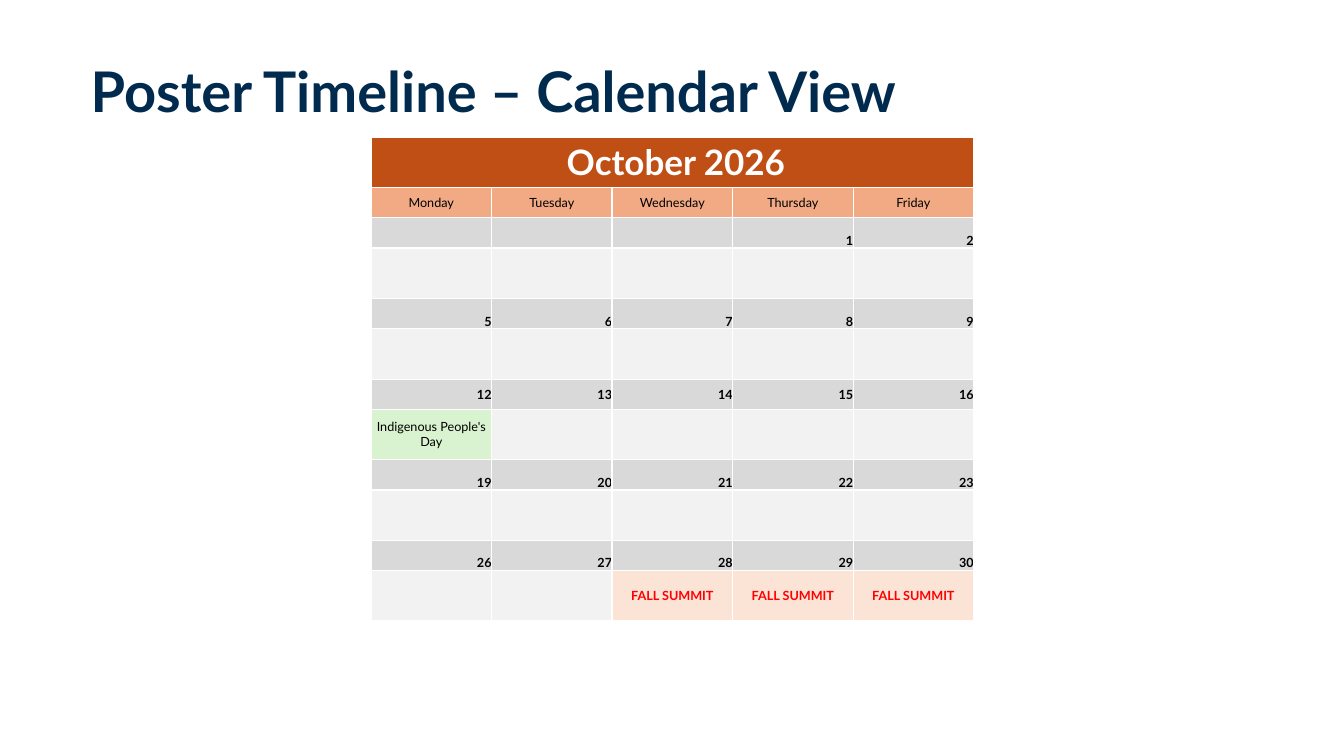
from lxml import etree
from pptx import Presentation
from pptx.dml.color import RGBColor
from pptx.enum.text import MSO_ANCHOR, MSO_AUTO_SIZE, PP_ALIGN
from pptx.oxml.ns import qn
from pptx.util import Pt

TOP, MIDDLE, BOTTOM = MSO_ANCHOR.TOP, MSO_ANCHOR.MIDDLE, MSO_ANCHOR.BOTTOM
LEFT, CENTER, RIGHT = PP_ALIGN.LEFT, PP_ALIGN.CENTER, PP_ALIGN.RIGHT
NO_AUTOFIT = MSO_AUTO_SIZE.NONE

NAVY = RGBColor(0x00, 0x2B, 0x4E)
WHITE = RGBColor(0xFF, 0xFF, 0xFF)
BLACK = RGBColor(0x00, 0x00, 0x00)
RED = RGBColor(0xFF, 0x00, 0x00)
RUST = RGBColor(0xC0, 0x4F, 0x15)
SALMON = RGBColor(0xF2, 0xAA, 0x84)
PEACH = RGBColor(0xFB, 0xE3, 0xD6)
GREEN = RGBColor(0xD9, 0xF2, 0xD0)
DATE_GRAY = RGBColor(0xD9, 0xD9, 0xD9)
DAY_GRAY = RGBColor(0xF2, 0xF2, 0xF2)

FONT = "Lato"
WEEKDAYS = ["Monday", "Tuesday", "Wednesday", "Thursday", "Friday"]
WEEKS = 5
FIRST_MONDAY = -2  # counted back from October 1, a Thursday
TALL, SHORT = 36, 21.6
COLUMN_WIDTH = 86.1

# Day of the month: text, fill, text colour, bold
EVENTS = {12: ("Indigenous People's Day", GREEN, BLACK, False)}
EVENTS.update({day: ("FALL SUMMIT", PEACH, RED, True) for day in (28, 29, 30)})


def add_run(paragraph, text, size, color, bold):
    run = paragraph.add_run()
    run.text = text
    run.font.name = FONT
    run.font.size = Pt(size)
    run.font.color.rgb = color
    run.font.bold = bold


def add_title(slide, text):
    title = slide.shapes.title
    title.left, title.top, title.width, title.height = Pt(57.6), Pt(42.5), Pt(844.6), Pt(54.7)
    frame = title.text_frame
    frame.auto_size = NO_AUTOFIT
    frame.vertical_anchor = TOP
    paragraph = frame.paragraphs[0]
    paragraph.alignment = LEFT
    paragraph.line_spacing = 0.9
    add_run(paragraph, text, 40, NAVY, True)


def add_borders(cell):
    properties = cell._tc.get_or_add_tcPr()
    for side in ("a:lnL", "a:lnR", "a:lnT", "a:lnB"):
        line = etree.SubElement(properties, qn(side), w=str(Pt(1)))
        fill = etree.SubElement(line, qn("a:solidFill"))
        etree.SubElement(fill, qn("a:srgbClr"), val=str(WHITE))


def fill_cell(cell, text, fill, size=9, color=BLACK, bold=False, align=CENTER, anchor=MIDDLE):
    add_borders(cell)
    cell.fill.solid()
    cell.fill.fore_color.rgb = fill
    cell.margin_left = cell.margin_right = cell.margin_top = cell.margin_bottom = 0
    cell.vertical_anchor = anchor
    paragraph = cell.text_frame.paragraphs[0]
    paragraph.alignment = align
    if text:
        add_run(paragraph, text, size, color, bold)
    else:
        # Small text size keeps empty cells from stretching their row
        etree.SubElement(paragraph._p, qn("a:endParaRPr"), sz=str(size * 100))


def add_calendar(slide):
    heights = [TALL, SHORT] + [SHORT, TALL] * WEEKS
    columns = len(WEEKDAYS)
    frame = slide.shapes.add_table(len(heights), columns, Pt(265), Pt(98),
                                   Pt(COLUMN_WIDTH * columns), Pt(sum(heights)))
    table = frame.table
    for column in table.columns:
        column.width = Pt(COLUMN_WIDTH)
    for row, height in zip(table.rows, heights):
        row.height = Pt(height)

    # Month and weekday headings
    month = table.cell(0, 0)
    month.merge(table.cell(0, columns - 1))
    fill_cell(month, "October 2026", RUST, 25, WHITE, True)
    month.margin_left = Pt(5)
    for column, weekday in enumerate(WEEKDAYS):
        fill_cell(table.cell(1, column), weekday, SALMON)

    # Each week has a date row and an event row
    for week in range(WEEKS):
        date_anchor = MIDDLE if week == 2 else BOTTOM
        for column in range(columns):
            day = FIRST_MONDAY + 7 * week + column
            date_row = 2 + 2 * week
            fill_cell(table.cell(date_row, column), str(day) if day > 0 else "", DATE_GRAY,
                      bold=True, align=RIGHT, anchor=date_anchor)
            text, fill, color, bold = EVENTS.get(day, ("", DAY_GRAY, BLACK, False))
            fill_cell(table.cell(date_row + 1, column), text, fill, color=color, bold=bold)


def main():
    presentation = Presentation()
    presentation.slide_width, presentation.slide_height = Pt(960), Pt(540)
    slide = presentation.slides.add_slide(presentation.slide_layouts[5])
    add_title(slide, "Poster Timeline – Calendar View")
    add_calendar(slide)
    presentation.save("out.pptx")


if __name__ == "__main__":
    main()
